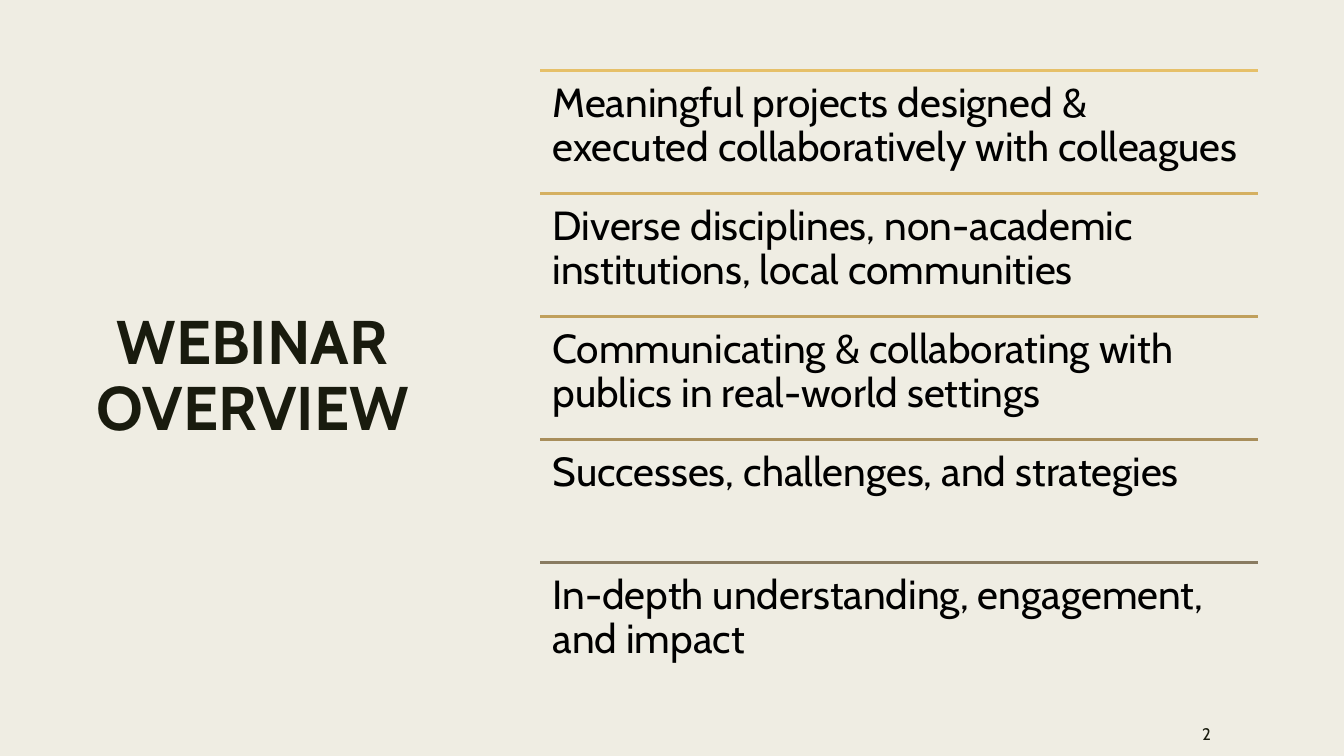
import pptx
import pptx.dml.color
import pptx.enum.shapes
import pptx.enum.text
import pptx.oxml
import pptx.oxml.ns
import pptx.util
from dataclasses import dataclass

Inches, Pt = pptx.util.Inches, pptx.util.Pt
Align = pptx.enum.text.PP_ALIGN
Anchor = pptx.enum.text.MSO_ANCHOR


@dataclass(frozen=True)
class Theme:
    font: str = "Cabin"
    paper: str = "EFEDE3"
    ink: str = "191B0E"
    topic_ink: str = "000000"
    title_size: float = 44
    topic_size: float = 29
    number_size: float = 12
    rule_width: float = 2.75


@dataclass(frozen=True)
class Box:
    left: float
    top: float
    width: float
    height: float

    def lengths(self):
        return [Inches(n) for n in (self.left, self.top, self.width, self.height)]

    def rows(self, count):
        step = self.height / count
        return [Box(self.left, self.top + i * step, self.width, step) for i in range(count)]


THEME = Theme()
PAGE = Box(0, 0, 13.33, 7.5)
MARGIN = 0.7
CONTENT_HEIGHT = PAGE.height - 2 * MARGIN
TITLE_BOX = Box(MARGIN, MARGIN, 3.61, CONTENT_HEIGHT)
TOPICS_BOX = Box(5.36, MARGIN, 7.12, CONTENT_HEIGHT)
NUMBER_BOX = Box(10.36, 7.06, 1.75, 0.44)

# Each topic with the colour of the rule above it
TOPICS = [
    ("Meaningful projects designed & executed collaboratively with colleagues", "E6C069"),
    ("Diverse disciplines, non-academic institutions, local communities", "D5B061"),
    ("Communicating & collaborating with publics in real-world settings", "C0A05C"),
    ("Successes, challenges, and strategies", "A88E5B"),
    ("In-depth understanding, engagement, and impact", "897B61"),
]


def rgb(code):
    return pptx.dml.color.RGBColor.from_string(code)


def write(shape, text, size, color, align, anchor, spacing=1.0, bold=False):
    frame = shape.text_frame
    frame.text = text
    frame.word_wrap = True
    frame.auto_size = pptx.enum.text.MSO_AUTO_SIZE.NONE
    frame.vertical_anchor = anchor
    para = frame.paragraphs[0]
    para.alignment = align
    para.line_spacing = spacing
    para.font.name = THEME.font
    para.font.size = Pt(size)
    para.font.bold = bold
    para.font.color.rgb = rgb(color)
    return frame


def add_title(slide, box, text):
    title = slide.shapes.title
    title.left, title.top, title.width, title.height = box.lengths()
    write(title, text, THEME.title_size, THEME.ink, Align.CENTER, Anchor.MIDDLE, 0.89, True)


def add_rule(shapes, box, color):
    """Draw a line along the top edge of the box."""
    left, top, width, _ = box.lengths()
    rule = shapes.add_connector(
        pptx.enum.shapes.MSO_CONNECTOR.STRAIGHT, left, top, left + width, top)
    rule.line.color.rgb = rgb(color)
    rule.line.width = Pt(THEME.rule_width)
    rule.element.spPr.append(pptx.oxml.parse_xml(
        f"<a:effectLst {pptx.oxml.ns.nsdecls('a')}/>"))


def add_topics(slide, box, topics):
    group = slide.shapes.add_group_shape()
    for row, (text, color) in zip(box.rows(len(topics)), topics):
        add_rule(group.shapes, row, color)
        topic = group.shapes.add_textbox(*row.lengths())
        frame = write(topic, text, THEME.topic_size, THEME.topic_ink,
                      Align.LEFT, Anchor.TOP, 0.9)
        frame.margin_left = frame.margin_right = Inches(0.12)
        frame.margin_top = frame.margin_bottom = Inches(0.12)


def add_page_number(slide, box, number):
    label = slide.shapes.add_textbox(*box.lengths())
    frame = write(label, str(number), THEME.number_size, THEME.ink,
                  Align.RIGHT, Anchor.MIDDLE)
    frame.paragraphs[0].space_after = Pt(6)


def add_overview(deck):
    title_only = deck.slide_layouts.get_by_name("Title Only")
    slide = deck.slides.add_slide(title_only)
    slide.background.fill.solid()
    slide.background.fill.fore_color.rgb = rgb(THEME.paper)
    add_title(slide, TITLE_BOX, "WEBINAR OVERVIEW")
    add_page_number(slide, NUMBER_BOX, 2)
    add_topics(slide, TOPICS_BOX, TOPICS)


def main():
    deck = pptx.Presentation()
    deck.slide_width, deck.slide_height = Inches(PAGE.width), Inches(PAGE.height)
    add_overview(deck)
    deck.save("out.pptx")


if __name__ == "__main__":
    main()
